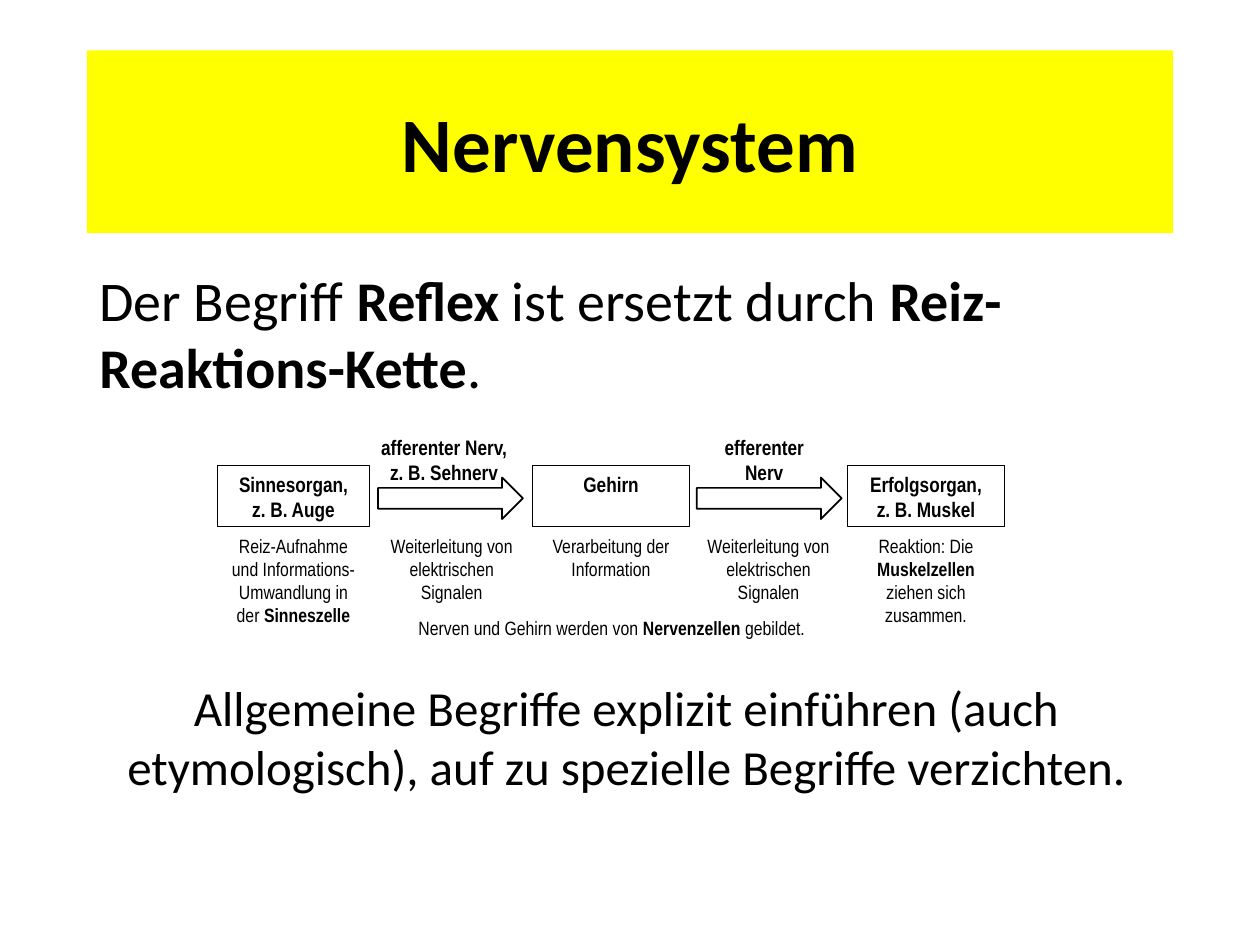
import pptx
import pptx.util
import pptx.dml.color
import pptx.enum.shapes
import pptx.enum.text
from pptx.util import Inches

COLORS = {"title": "FFFF00", "box": "FFFFFF", "ink": "000000"}
SHAPES = pptx.enum.shapes.MSO_SHAPE
CENTER = pptx.enum.text.PP_ALIGN.CENTER
MIDDLE = pptx.enum.text.MSO_ANCHOR.MIDDLE
BODY_FONT, CHAIN_FONT = "Calibri", "Arial Narrow"


def rgb(name):
    return pptx.dml.color.RGBColor.from_string(COLORS[name])


def write(sp, text, size, font=CHAIN_FONT, bold=None, align=CENTER):
    """Fill a shape with one paragraph; parts between asterisks are bold."""
    tf = sp.text_frame
    tf.word_wrap = True
    p = tf.paragraphs[0]
    p.alignment = align
    p.font.size = pptx.util.Pt(size)
    p.font.name = font
    p.font.bold = bold
    p.font.color.rgb = rgb("ink")
    for i, part in enumerate(text.split("*")):
        if part:
            r = p.add_run()
            r.text = part
            if i % 2:
                r.font.bold = True
    return p


def add_shape(s, kind, x, y, w, h, fill=None, line=None):
    sp = s.shapes.add_shape(kind, Inches(x), Inches(y), Inches(w), Inches(h))
    sp.shadow.inherit = False
    if fill:
        sp.fill.solid()
        sp.fill.fore_color.rgb = rgb(fill)
    else:
        sp.fill.background()
    if line:
        sp.line.color.rgb = rgb("ink")
        sp.line.width = pptx.util.Pt(line)
    else:
        sp.line.fill.background()
    sp.text_frame.vertical_anchor = pptx.enum.text.MSO_ANCHOR.TOP
    return sp


def add_box(s, x, y, w, h, line=None):
    return add_shape(s, SHAPES.RECTANGLE, x, y, w, h, "box", line)


def add_text(s, x, y, w, h, text, size, **style):
    sp = s.shapes.add_textbox(Inches(x), Inches(y), Inches(w), Inches(h))
    write(sp, text, size, **style)


def add_chain(s):
    """Stimulus-response chain: three stations joined by two nerves."""
    # x, width, heading, space before heading, note, note height
    stations = [
        (1.73, 1.2, "Sinnesorgan, z.\u00a0B. Auge", 0,
         "Reiz-Aufnahme und Informations-Umwandlung in der *Sinneszelle*", 0.81),
        (4.23, 1.24, "Gehirn", 6, "Verarbeitung der Information", 0.65),
        (6.73, 1.24, "Erfolgsorgan, z.\u00a0B. Muskel", 0,
         "Reaktion: Die *Muskelzellen* ziehen sich zusammen.", 0.81),
    ]
    # arrow x, note x, note width, label x, label width, label
    nerves = [
        (3.0, 2.94, 1.29, 2.91, 1.23, "afferenter Nerv, z. B. Sehnerv"),
        (5.53, 5.47, 1.26, 5.59, 0.95, "efferenter Nerv"),
    ]
    # Notes below the chain
    for x, w, _, _, note, h in stations:
        write(add_box(s, x, 4.19, w, h), note, 11)
    for _, x, w, _, _, _ in nerves:
        write(add_box(s, x, 4.19, w, 0.65),
              "Weiterleitung von elektrischen Signalen", 11)

    # Nerves: arrows with labels above
    for arrow_x, _, _, x, w, label in nerves:
        add_shape(s, SHAPES.RIGHT_ARROW, arrow_x, 3.79, 1.15, 0.33, line=1)
        add_text(s, x, 3.4, w, 0.57, label, 12, bold=True)

    # Stations: framed headings
    for x, w, heading, space, _, _ in stations:
        p = write(add_box(s, x, 3.69, w, 0.49, 0.5), heading, 12, bold=True)
        p.space_before = pptx.util.Pt(space)

    # Summary line
    write(add_box(s, 3.03, 4.84, 3.65, 0.35),
          "Nerven und Gehirn werden von *Nervenzellen* gebildet.", 11)


def main():
    prs = pptx.Presentation()
    prs.slide_width, prs.slide_height = Inches(10), Inches(7.5)
    s = prs.slides.add_slide(prs.slide_layouts[6])

    # Title band
    title = add_shape(s, SHAPES.RECTANGLE, 0.69, 0.4, 8.62, 1.45, "title")
    title.text_frame.vertical_anchor = MIDDLE
    write(title, "Nervensystem", 44, font=BODY_FONT, bold=True)

    # Statement, chain and conclusion
    add_text(s, 0.69, 2.06, 8.62, 1.72,
             "Der Begriff *Reflex* ist ersetzt durch *Reiz-Reaktions-Kette*.",
             32, font=BODY_FONT, align=pptx.enum.text.PP_ALIGN.LEFT)
    add_chain(s)
    add_text(s, 0.88, 5.33, 8.18, 1.04,
             "Allgemeine Begriffe explizit einführen (auch etymologisch), "
             "auf zu spezielle Begriffe verzichten.", 28, font=BODY_FONT)

    prs.save("out.pptx")


if __name__ == "__main__":
    main()
